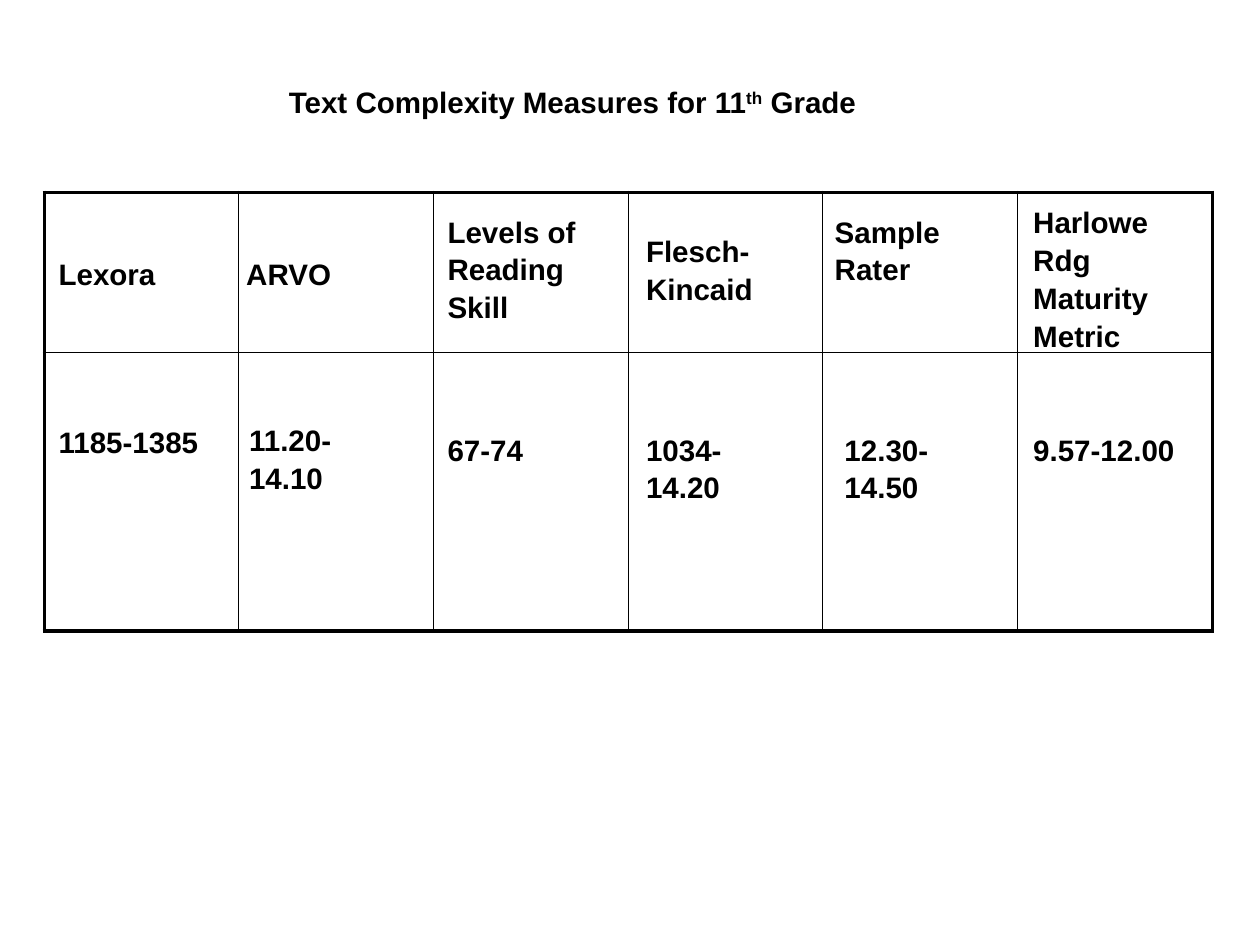
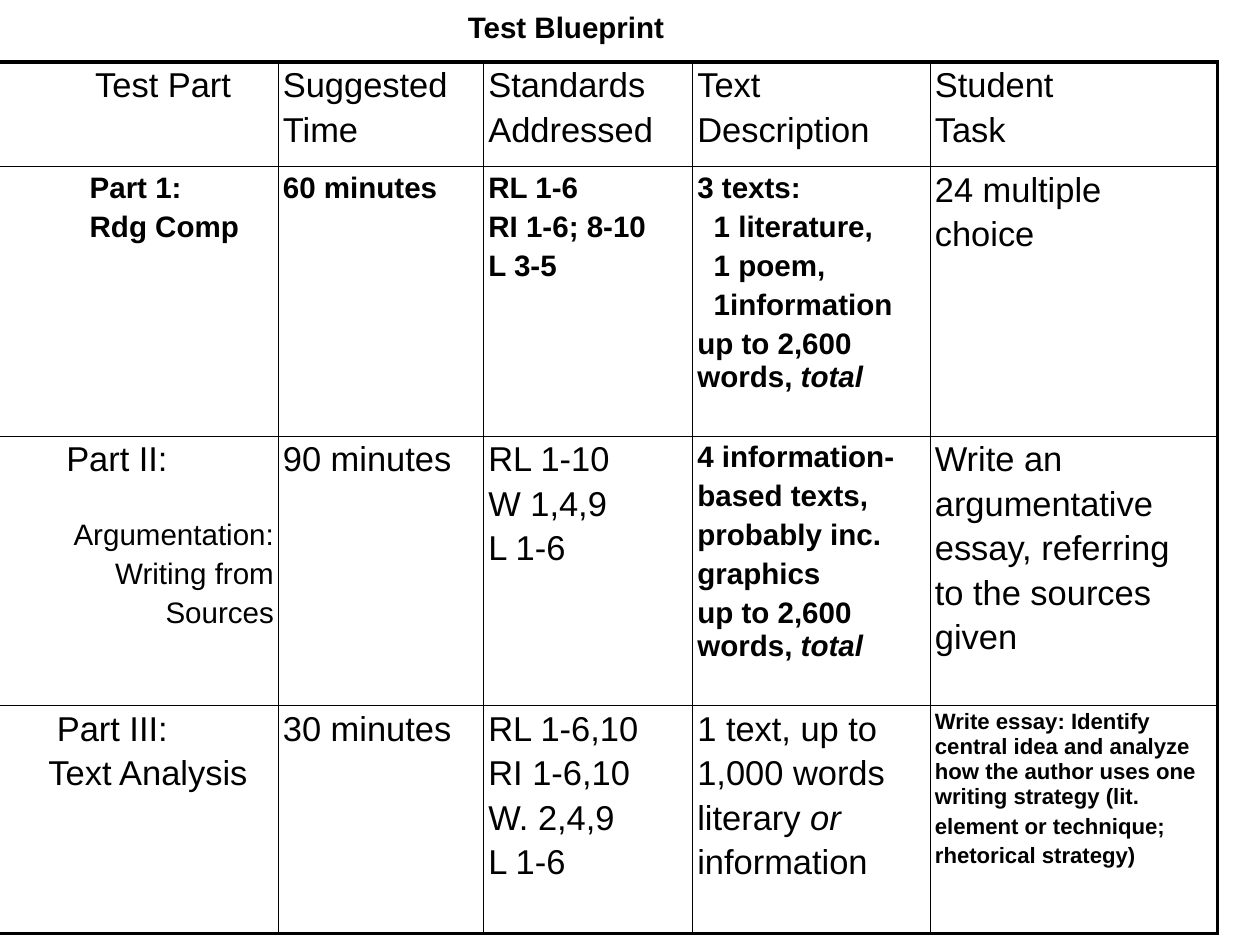
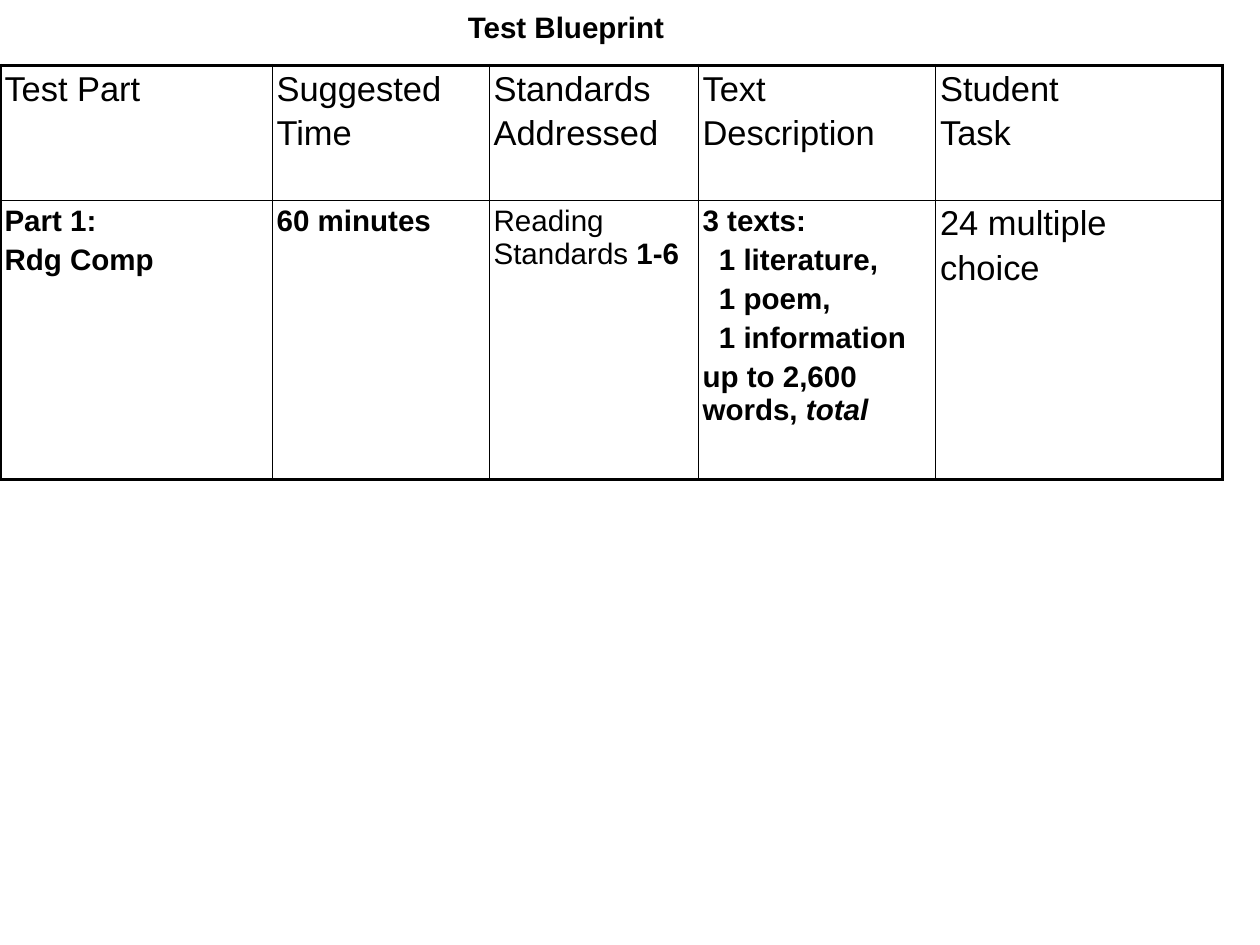
import pptx
import pptx.dml.color
import pptx.enum.text
import pptx.oxml
import pptx.oxml.ns
import pptx.util

Cm = pptx.util.Cm
Pt = pptx.util.Pt
ALIGN = pptx.enum.text.PP_ALIGN

FONT = "Arial"
BLACK = "000000"
WHITE = "FFFFFF"
THIN, THICK = 1, 3
BOX_INSET, CELL_INSET = 0.18, 0.13
LABEL_SPACING = 1.07

BOLD = {"size": 24, "bold": True}
ITALIC = {"italic": True}
SMALL_BOLD = {"size": 18, "bold": True, "before": 4}
RIGHT = {"size": 24, "align": ALIGN.RIGHT}
LIST_INDENT = 0.47

# Each cell is a list of (text, format); a text is a string or a list of runs.
HEADINGS = [
    [("Suggested\nTime", {})],
    [("Standards\nAddressed", {})],
    [("Text\nDescription", {})],
    [("Student\nTask", {})],
]
WORD_LIMIT = ([("up to 2,600 words, ", {}), ("total", ITALIC)], BOLD)
SIXTY_MINUTES = [("60 minutes", BOLD)]
MULTIPLE_CHOICE = [("24 multiple\nchoice", {})]


def three_texts(information):
    return [
        ("3 texts:", BOLD),
        ("1 literature,\n1 poem,\n" + information, {**BOLD, "indent": LIST_INDENT}),
        WORD_LIMIT,
    ]


FULL_BLUEPRINT = [
    [[("Test Part", {"indent": 2.75})], *HEADINGS],
    [
        [("Part 1:\nRdg Comp", {**BOLD, "indent": 2.59})],
        SIXTY_MINUTES,
        [("RL 1-6\nRI 1-6; 8-10\nL 3-5", BOLD)],
        three_texts("1information"),
        MULTIPLE_CHOICE,
    ],
    [
        [
            ("Part II:", {"indent": 1.92}),
            ("Argumentation:", {**RIGHT, "before": 32}),
            ("Writing from\nSources", RIGHT),
        ],
        [("90 minutes", {})],
        [("RL 1-10\nW 1,4,9\nL 1-6", {})],
        [("4 information-\nbased texts,\nprobably inc.\ngraphics", BOLD), WORD_LIMIT],
        [("Write an\nargumentative\nessay, referring\nto the sources\ngiven", {})],
    ],
    [
        [("Part III:", {"indent": 1.65}), ("Text Analysis", {"indent": 1.41})],
        [("30 minutes", {})],
        [("RL 1-6,10\nRI 1-6,10\nW. 2,4,9\nL 1-6", {})],
        [
            ("1 text, up to\n1,000 words", {}),
            ([("literary ", {}), ("or", ITALIC)], {}),
            ("information", {}),
        ],
        [
            (
                "Write essay: Identify central idea and analyze how the author "
                "uses one writing strategy (lit.\n"
                "element or technique;\nrhetorical strategy)",
                SMALL_BOLD,
            )
        ],
    ],
]

SHORT_BLUEPRINT = [
    [[("Test Part", {})], *HEADINGS],
    [
        [("Part 1:\nRdg Comp", BOLD)],
        SIXTY_MINUTES,
        [([("Reading Standards", {}), (" 1-6", {"bold": True})], {"size": 24})],
        three_texts("1 information"),
        MULTIPLE_CHOICE,
    ],
]

# Text, left and top in centimetres.
MEASURE_LABELS = [
    ("Lexora", 1.5, 7.09),
    ("ARVO", 6.88, 7.09),
    ("Levels of\nReading\nSkill", 12.65, 5.87),
    ("Flesch-\nKincaid", 18.34, 6.43),
    ("Sample\nRater", 23.75, 5.87),
    ("Harlowe\nRdg\nMaturity\nMetric", 29.44, 5.59),
    ("1185-1385", 1.5, 11.91),
    ("11.20-\n14.10", 6.96, 11.84),
    ("67-74", 12.65, 12.12),
    ("1034-\n14.20", 18.34, 12.12),
    ("12.30-\n14.50", 24.03, 12.12),
    ("9.57-12.00", 29.44, 12.12),
]


def color(value):
    return pptx.dml.color.RGBColor.from_string(value)


def set_insets(holder, inset):
    for side in ("left", "top", "right", "bottom"):
        setattr(holder, "margin_" + side, Cm(inset))


def add_paragraph(frame):
    """Return the empty first paragraph, or a new one after written text."""
    first = frame.paragraphs[0]
    if len(frame.paragraphs) == 1 and not first.runs:
        return first
    return frame.add_paragraph()


def write(frame, text, size=28, bold=False, italic=False, align=ALIGN.LEFT,
          before=5, indent=0, spacing=None):
    """Write a string, one paragraph a line, or a list of (text, format) runs."""
    if isinstance(text, str):
        lines = [[(line, {})] for line in text.split("\n")]
    else:
        lines = [text]
    for line in lines:
        paragraph = add_paragraph(frame)
        paragraph.alignment = align
        paragraph.space_before = Pt(before)
        if spacing:
            paragraph.line_spacing = spacing
        if indent:
            paragraph._p.get_or_add_pPr().set("marL", str(Cm(indent)))
        for words, changes in line:
            run = paragraph.add_run()
            run.text = words
            font = run.font
            font.name = FONT
            font.size = Pt(size)
            font.bold = changes.get("bold", bold)
            font.italic = changes.get("italic", italic)
            font.color.rgb = color(BLACK)
            if changes.get("superscript"):
                font._element.set("baseline", "30000")


def add_label(slide, text, left, top, width=5):
    line_count = text.count("\n") + 1 if isinstance(text, str) else 1
    box = slide.shapes.add_textbox(Cm(left), Cm(top), Cm(width),
                                   Cm(2 * BOX_INSET + line_count))
    frame = box.text_frame
    frame.word_wrap = True
    set_insets(frame, BOX_INSET)
    write(frame, text, before=0, spacing=LABEL_SPACING, **BOLD)


def set_border(cell, side, width):
    line = pptx.oxml.parse_xml(
        f'<a:ln{side} {pptx.oxml.ns.nsdecls("a")} w="{Pt(width)}">'
        f'<a:solidFill><a:srgbClr val="{BLACK}"/></a:solidFill></a:ln{side}>'
    )
    cell._tc.get_or_add_tcPr().append(line)


def add_grid(slide, left, top, columns, rows, content=None):
    """Add a table with thin inner lines and a thick frame."""
    table = slide.shapes.add_table(
        len(rows), len(columns), Cm(left), Cm(top), Cm(sum(columns)), Cm(sum(rows))
    ).table
    table.first_row = False
    table.horz_banding = False
    for column, width in zip(table.columns, columns):
        column.width = Cm(width)
    for row, height in zip(table.rows, rows):
        row.height = Cm(height)
    for r in range(len(rows)):
        for c in range(len(columns)):
            cell = table.cell(r, c)
            on_frame = {"L": c == 0, "R": c == len(columns) - 1,
                        "T": r == 0, "B": r == len(rows) - 1}
            for side, outer in on_frame.items():
                set_border(cell, side, THICK if outer else THIN)
            cell.fill.background()
            set_insets(cell, CELL_INSET)
            for text, style in content[r][c] if content else []:
                write(cell.text_frame, text, **style)


def add_slide(presentation):
    slide = presentation.slides.add_slide(presentation.slide_layouts[6])
    slide.background.fill.solid()
    slide.background.fill.fore_color.rgb = color(WHITE)
    return slide


def add_measures_slide(presentation):
    slide = add_slide(presentation)
    title = [("Text Complexity Measures for 11", {}),
             ("th", {"superscript": True}), (" Grade", {})]
    add_label(slide, title, 8.1, 2.16, width=18)
    add_grid(slide, 1.27, 5.51, [5.58] * 6, [4.6, 7.98])
    for text, left, top in MEASURE_LABELS:
        add_label(slide, text, left, top)


def add_blueprint_slide(presentation, left, top, first_columns, rows, content):
    slide = add_slide(presentation)
    add_label(slide, "Test Blueprint", 13.23, 0, width=8)
    add_grid(slide, left, top, first_columns + [5.99, 6.81, 8.23], rows, content)


def main():
    presentation = pptx.Presentation()
    presentation.slide_width = Cm(36.12)
    presentation.slide_height = Cm(27.09)
    add_measures_slide(presentation)
    add_blueprint_slide(presentation, -0.15, 1.78, [8.13, 5.89],
                        [3, 7.72, 7.72, 6.55], FULL_BLUEPRINT)
    add_blueprint_slide(presentation, 0, 1.88, [7.8, 6.22], [3.86, 8],
                        SHORT_BLUEPRINT)
    presentation.save("out.pptx")


if __name__ == "__main__":
    main()
